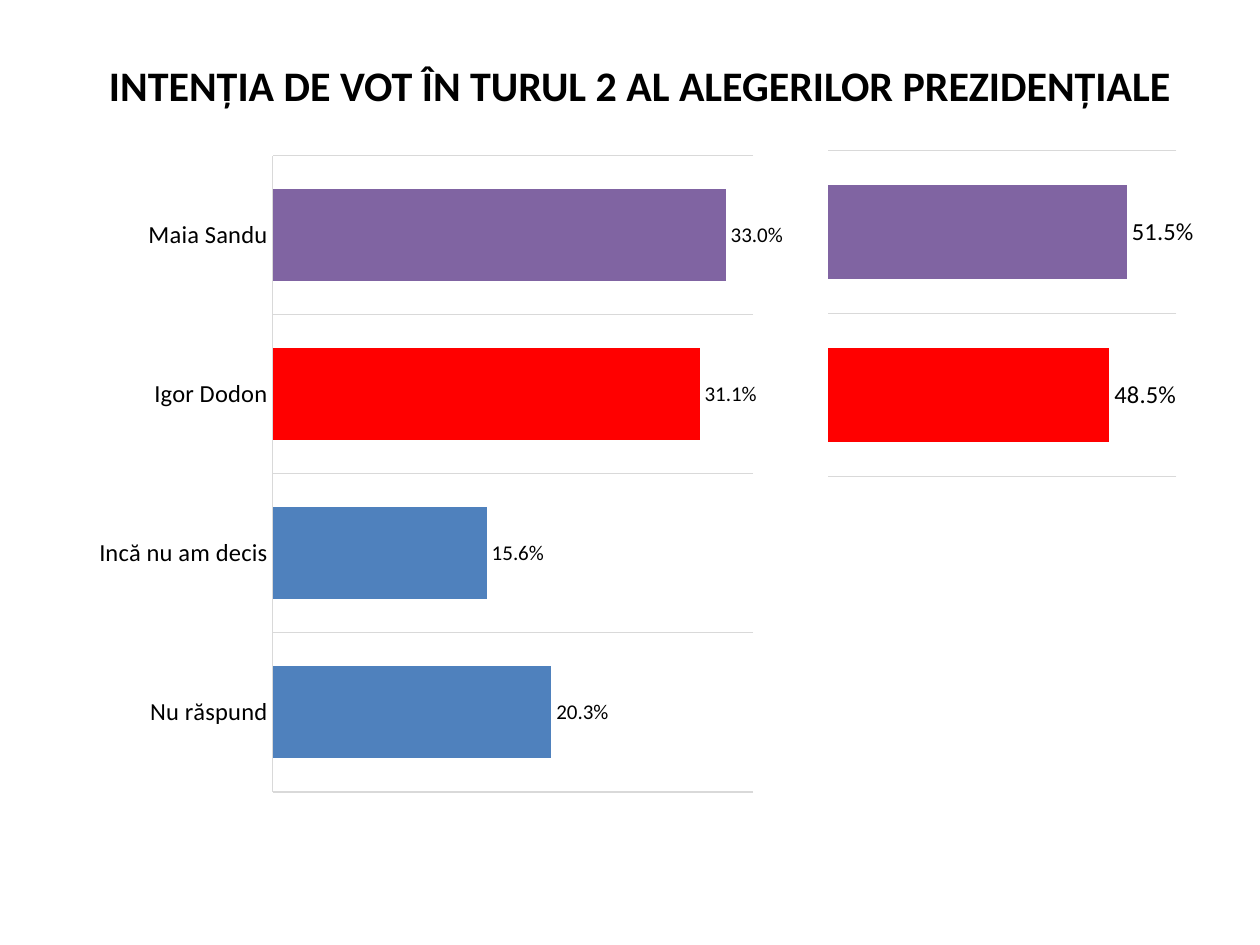
from dataclasses import dataclass
from typing import Any

import pptx
import pptx.chart.data
import pptx.dml.color
import pptx.enum.chart
import pptx.enum.text
import pptx.oxml
import pptx.oxml.ns
import pptx.util

PX = 914400 / 126
FONT = "Calibri"
BLACK = pptx.dml.color.RGBColor(0x00, 0x00, 0x00)
GREY = pptx.dml.color.RGBColor(0xD9, 0xD9, 0xD9)
BLUE = pptx.dml.color.RGBColor(0x4F, 0x81, 0xBD)
RED = pptx.dml.color.RGBColor(0xFF, 0x00, 0x00)
PURPLE = pptx.dml.color.RGBColor(0x80, 0x64, 0xA2)


@dataclass(frozen=True)
class Box:
    left: int
    top: int
    width: int
    height: int

    def emu(self) -> list[int]:
        return [px(n) for n in (self.left, self.top, self.width, self.height)]


@dataclass(frozen=True)
class Bar:
    category: str
    value: float
    color: pptx.dml.color.RGBColor


@dataclass(frozen=True)
class Poll:
    box: Box
    plot: tuple[float, float, float, float]
    bars: tuple[Bar, ...]
    maximum: float
    label_size: int
    show_categories: bool


TITLE_BOX = Box(73, 32, 1134, 105)
POLLS = (
    Poll(
        Box(73, 136, 726, 675),
        (0.275, 0.029, 0.662, 0.943),
        (
            Bar("Nu răspund", 0.203, BLUE),
            Bar("Incă nu am decis", 0.156, BLUE),
            Bar("Igor Dodon", 0.311, RED),
            Bar("Maia Sandu", 0.33, PURPLE),
        ),
        0.35, 12, True,
    ),
    Poll(
        Box(827, 136, 381, 355),
        (0.0, 0.04, 0.917, 0.919),
        (Bar("1", 0.485, RED), Bar("2", 0.515, PURPLE)),
        0.6, 14, False,
    ),
)


def px(length: int) -> int:
    return round(length * PX)


def apply_format(target: Any, values: dict[str, Any]) -> None:
    for name, value in values.items():
        setattr(target, name, value)


def set_font(font: Any, size: int, bold: bool = False) -> None:
    apply_format(font, {"name": FONT, "size": pptx.util.Pt(size), "bold": bold})
    font.color.rgb = BLACK


def set_line(line: Any) -> None:
    line.color.rgb = GREY
    line.width = pptx.util.Pt(0.75)


def set_plot_layout(chart: Any, plot: tuple[float, float, float, float]) -> None:
    plot_area = chart.element.find(".//" + pptx.oxml.ns.qn("c:plotArea"))
    for layout in plot_area.findall(pptx.oxml.ns.qn("c:layout")):
        plot_area.remove(layout)
    settings = [("layoutTarget", "inner"), ("xMode", "edge"), ("yMode", "edge")]
    settings += zip("xywh", plot)
    children = "".join(f'<c:{name} val="{value}"/>' for name, value in settings)
    plot_area.insert(0, pptx.oxml.parse_xml(
        f'<c:layout {pptx.oxml.ns.nsdecls("c")}>'
        f"<c:manualLayout>{children}</c:manualLayout></c:layout>"
    ))


def add_title(slide: Any, text: str) -> None:
    title = slide.shapes.title
    apply_format(title, dict(zip(("left", "top", "width", "height"), TITLE_BOX.emu())))
    frame = title.text_frame
    frame.text = text
    apply_format(frame, {
        "word_wrap": True,
        "vertical_anchor": pptx.enum.text.MSO_ANCHOR.MIDDLE,
    })
    paragraph = frame.paragraphs[0]
    paragraph.alignment = pptx.enum.text.PP_ALIGN.CENTER
    set_font(paragraph.runs[0].font, 24, bold=True)


def add_poll(slide: Any, poll: Poll) -> None:
    data = pptx.chart.data.CategoryChartData(number_format="0.0%")
    data.categories = [bar.category for bar in poll.bars]
    data.add_series("Series 1", [bar.value for bar in poll.bars])
    chart = slide.shapes.add_chart(
        pptx.enum.chart.XL_CHART_TYPE.BAR_CLUSTERED, *poll.box.emu(), data
    ).chart
    apply_format(chart, {"has_title": False, "has_legend": False})
    set_font(chart.font, poll.label_size)
    set_plot_layout(chart, poll.plot)

    tick_none = pptx.enum.chart.XL_TICK_MARK.NONE
    category_axis = chart.category_axis
    apply_format(category_axis, {
        "visible": poll.show_categories,
        "has_major_gridlines": True,
        "major_tick_mark": tick_none,
        "minor_tick_mark": tick_none,
    })
    set_font(category_axis.tick_labels.font, 14)
    set_line(category_axis.format.line)
    set_line(category_axis.major_gridlines.format.line)
    apply_format(chart.value_axis, {
        "visible": False,
        "has_major_gridlines": False,
        "minimum_scale": 0,
        "maximum_scale": poll.maximum,
    })

    plot = chart.plots[0]
    apply_format(plot, {"gap_width": 73, "vary_by_categories": False})
    series = plot.series[0]
    series.format.fill.solid()
    series.format.fill.fore_color.rgb = BLUE
    for index, bar in enumerate(poll.bars):
        if bar.color != BLUE:
            fill = series.points[index].format.fill
            fill.solid()
            fill.fore_color.rgb = bar.color
    labels = series.data_labels
    apply_format(labels, {
        "show_value": True,
        "number_format": "0.0%",
        "number_format_is_linked": False,
        "position": pptx.enum.chart.XL_LABEL_POSITION.OUTSIDE_END,
    })
    set_font(labels.font, poll.label_size)


def main() -> None:
    presentation = pptx.Presentation()
    apply_format(presentation, {"slide_width": px(1260), "slide_height": px(945)})
    slide = presentation.slides.add_slide(presentation.slide_layouts[5])
    add_title(slide, "INTENȚIA DE VOT ÎN TURUL 2 AL ALEGERILOR PREZIDENȚIALE")
    for poll in POLLS:
        add_poll(slide, poll)
    presentation.save("out.pptx")


if __name__ == "__main__":
    main()
